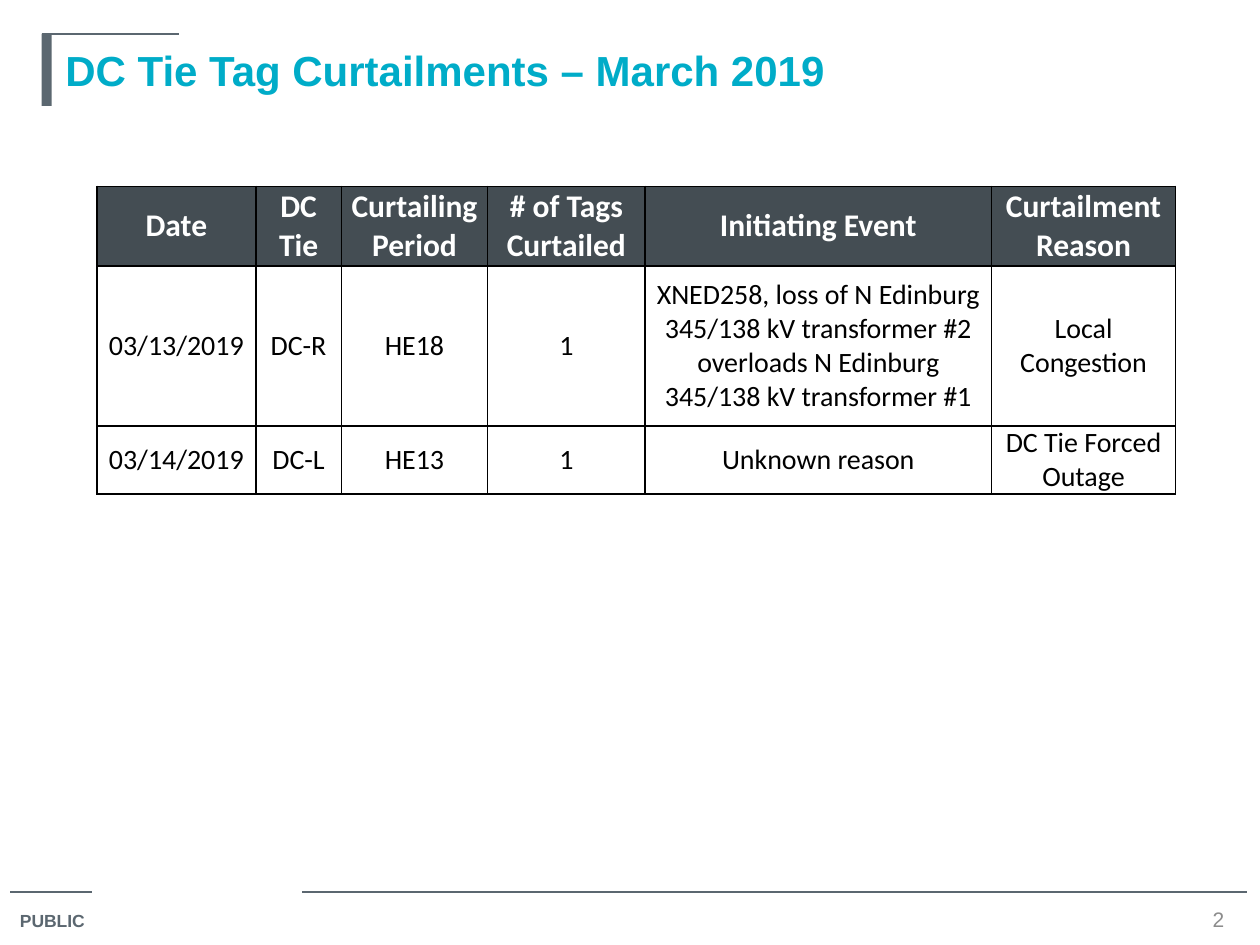
from typing import NamedTuple

from lxml import etree
from pptx import Presentation
from pptx import util as u
from pptx.dml.color import RGBColor
from pptx.enum import shapes, text
from pptx.oxml.ns import qn

SCALE = 9144  # EMU per px, 100 px to the inch
HUES = {
    "slate": "5B6770",
    "teal": "00ACC8",
    "gray": "8C8C8C",
    "head": "444D53",
    "white": "FFFFFF",
    "black": "000000",
}
MID = text.MSO_ANCHOR.MIDDLE
TOP = text.MSO_ANCHOR.TOP
LEFT = text.PP_ALIGN.LEFT
CENTER = text.PP_ALIGN.CENTER


class Style(NamedTuple):
    size: int
    hue: str
    bold: bool = False
    face: str = "Arial"


class Rule(NamedTuple):
    x1: int
    x2: int
    y: int


class Label(NamedTuple):
    words: str
    box: tuple[int, int, int, int]
    style: Style
    anchor: text.MSO_ANCHOR = MID
    align: text.PP_ALIGN = LEFT


RULES = [Rule(8, 73, 708), Rule(240, 990, 708), Rule(33, 142, 27)]
BAR = (33, 27, 8, 57)
LABELS = [
    Label("PUBLIC", (6, 717, 77, 28), Style(10, "slate", True), TOP),
    Label("DC Tie Tag Curtailments – March 2019", (42, 27, 925, 57),
          Style(24, "teal", True)),
    Label("2", (942, 718, 50, 23), Style(12, "gray"), align=CENTER),
]

HEAD = Style(18, "white", True, "Calibri")
BODY = Style(16, "black", False, "Calibri")
COLS = [126, 68, 116, 125, 275, 146]
ROWS = [63, 127, 54]
DATA = [
    ["Date", "DC Tie", "Curtailing Period", "# of Tags Curtailed",
     "Initiating Event", "Curtailment Reason"],
    ["03/13/2019", "DC-R", "HE18", "1",
     "XNED258, loss of N Edinburg 345/138 kV transformer #2 "
     "overloads N Edinburg 345/138 kV transformer #1",
     "Local Congestion"],
    ["03/14/2019", "DC-L", "HE13", "1", "Unknown reason",
     "DC Tie Forced Outage"],
]


def px(n: int) -> u.Emu:
    return u.Emu(n * SCALE)


def color(hue: str) -> RGBColor:
    return RGBColor.from_string(HUES[hue])


def write(frame, words: str, style: Style, align) -> None:
    para = frame.paragraphs[0]
    para.alignment = align
    run = para.add_run()
    run.text = words
    font = run.font
    font.name, font.size, font.bold = style.face, u.Pt(style.size), style.bold
    font.color.rgb = color(style.hue)


def draw_rule(slide, rule: Rule) -> None:
    line = slide.shapes.add_connector(
        shapes.MSO_CONNECTOR.STRAIGHT,
        px(rule.x1), px(rule.y), px(rule.x2), px(rule.y))
    line.line.color.rgb = color("slate")
    line.line.width = u.Pt(0.75)
    etree.SubElement(line._element.spPr, qn("a:effectLst"))


def draw_bar(slide, box: tuple[int, int, int, int]) -> None:
    bar = slide.shapes.add_shape(shapes.MSO_SHAPE.RECTANGLE, *map(px, box))
    bar.shadow.inherit = False
    bar.fill.solid()
    bar.fill.fore_color.rgb = color("slate")
    bar.line.fill.background()


def draw_label(slide, label: Label) -> None:
    frame = slide.shapes.add_textbox(*map(px, label.box)).text_frame
    frame.word_wrap = True
    frame.vertical_anchor = label.anchor
    write(frame, label.words, label.style, label.align)


def add_edges(cell) -> None:
    props = cell._tc.get_or_add_tcPr()
    for spot, side in enumerate(("lnL", "lnR", "lnT", "lnB")):
        edge = etree.Element(qn(f"a:{side}"), w=str(u.Pt(1)))
        fill = etree.SubElement(edge, qn("a:solidFill"))
        etree.SubElement(fill, qn("a:srgbClr"), val=HUES["black"])
        props.insert(spot, edge)


def draw_cell(cell, words: str, top: bool) -> None:
    cell.margin_left = cell.margin_right = px(7)
    cell.margin_top = cell.margin_bottom = 0
    cell.vertical_anchor = MID
    cell.fill.solid()
    cell.fill.fore_color.rgb = color("head" if top else "white")
    write(cell.text_frame, words, HEAD if top else BODY, CENTER)
    add_edges(cell)


def draw_table(slide, x: int, y: int) -> None:
    table = slide.shapes.add_table(
        len(ROWS), len(COLS), px(x), px(y), px(sum(COLS)), px(sum(ROWS))).table
    table.horz_banding = False
    for col, wide in zip(table.columns, COLS):
        col.width = px(wide)
    for row, high in zip(table.rows, ROWS):
        row.height = px(high)
    for r, line in enumerate(DATA):
        for c, words in enumerate(line):
            draw_cell(table.cell(r, c), words, r == 0)


def main() -> None:
    deck = Presentation()
    deck.slide_width, deck.slide_height = px(1000), px(750)
    slide = deck.slides.add_slide(deck.slide_layouts[6])

    # Frame: rules and title bar
    for rule in RULES:
        draw_rule(slide, rule)
    draw_bar(slide, BAR)

    # Title, footer and page number
    for label in LABELS:
        draw_label(slide, label)

    # Curtailments
    draw_table(slide, 77, 148)

    deck.save("out.pptx")


if __name__ == "__main__":
    main()
